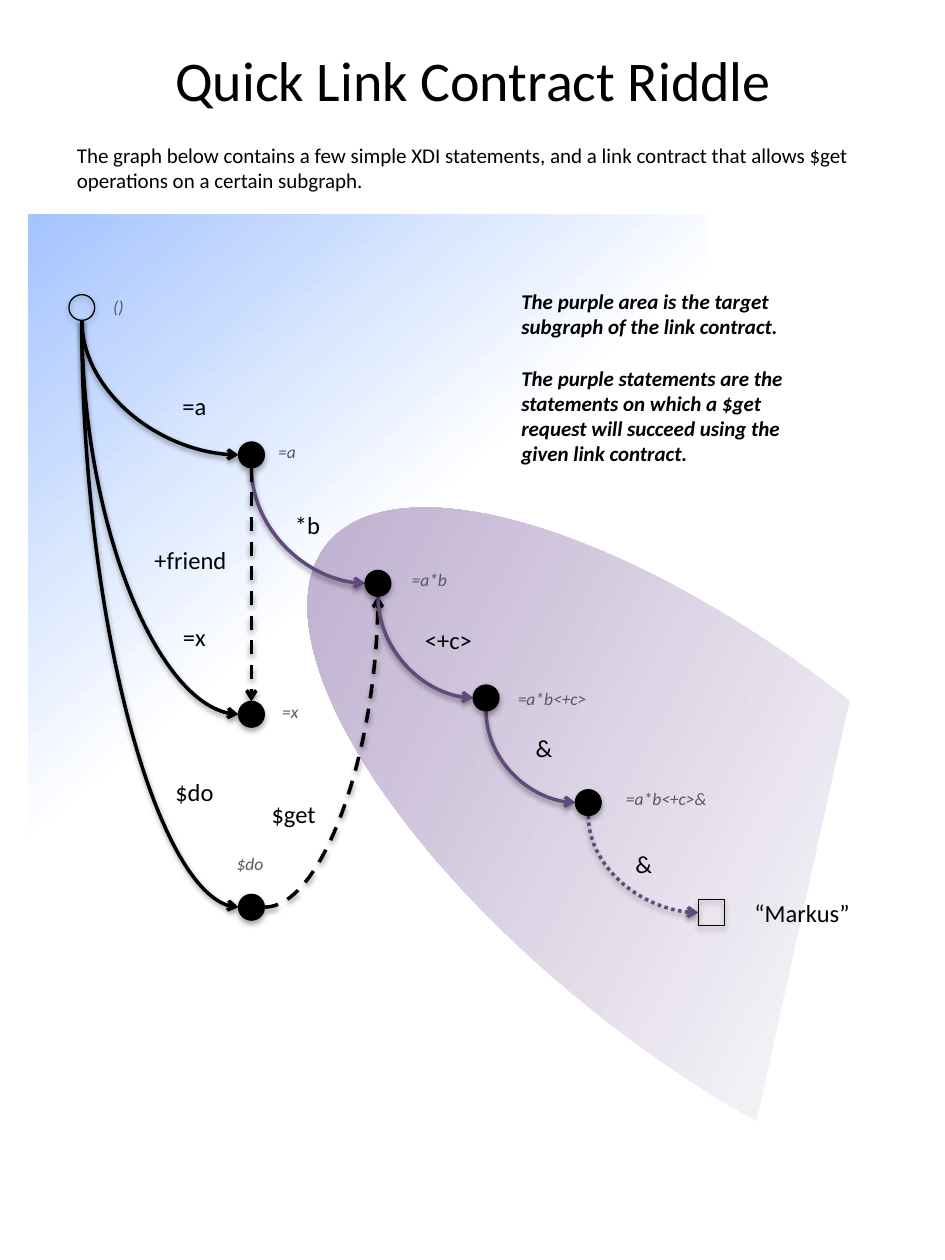
from pptx import Presentation
from pptx import util as u
from pptx.dml import color as c
from pptx.enum import dml, shapes, text
from pptx.oxml import ns, parse_xml

COLORS = {"black": "000000", "white": "FFFFFF", "gray": "595959",
          "blue": "A4C4FF", "lilac": "B3A2C7", "purple": "604A7B"}
FONT = "Calibri"
NODE = 0.52
RADIUS = NODE / 2
NODES = {"root": (1.65, 6.2), "a": (5.07, 9.17), "x": (5.07, 14.4),
         "do": (5.07, 18.29), "ab": (7.62, 11.76), "abc": (9.8, 14.07),
         "abc&": (11.86, 16.18), "literal": (14.34, 18.4)}
ARCS = [("root", "do", "black", None), ("root", "x", "black", None),
        ("root", "a", "black", None), ("a", "ab", "purple", None),
        ("ab", "abc", "purple", None), ("abc", "abc&", "purple", None),
        ("abc&", "literal", "purple", dml.MSO_LINE.ROUND_DOT)]
ARC_LABELS = [("$do", 3.92, 15.54, 1.4), ("=a", 3.92, 7.75, 1.2),
              ("*b", 6.2, 10.16, 1.2), ("$get", 5.92, 15.98, 1.5),
              ("<+c>", 9.04, 12.47, 1.6), ("&", 10.97, 14.66, 1.2),
              ("&", 12.98, 16.99, 1.2), ("=x", 3.92, 12.42, 1.2),
              ("+friend", 3.84, 10.87, 2.1), ("“Markus”", 16.17, 17.98, 2.5)]
NODE_LABELS = [("()", 2.03, 5.84, 0.84), ("=a", 5.36, 8.76, 1.12),
               ("=a*b", 8.05, 11.35, 1.5), ("=a*b<+c>", 10.19, 13.74, 2.31),
               ("=a*b<+c>&", 12.37, 15.77, 2.31), ("=x", 5.44, 14, 1.12),
               ("$do", 4.52, 17.07, 1.12)]
NOTES = [("The purple area is the target subgraph of the link contract.", 5.69, 1.5),
         ("The purple statements are the statements on which a $get request "
          "will succeed using the given link contract.", 7.24, 1.78)]


def rgb(name):
    """Return the named colour."""
    return c.RGBColor.from_string(COLORS[name])


def write(frame, words, size, color="black", bold=False, italic=False, align=None):
    """Put one formatted run in the first paragraph of a frame."""
    para = frame.paragraphs[0]
    para.alignment = align
    span = para.add_run()
    span.text = words
    span.font.name, span.font.size = FONT, u.Pt(size)
    span.font.bold, span.font.italic = bold, italic
    span.font.color.rgb = rgb(color)


def add_text(page, words, left, top, width, height, size, wrap=True, **style):
    """Add a text box with a single run; one that does not wrap grows to fit."""
    box = page.shapes.add_textbox(u.Cm(left), u.Cm(top), u.Cm(width), u.Cm(height))
    box.text_frame.word_wrap = wrap
    if not wrap:
        box.text_frame.auto_size = text.MSO_AUTO_SIZE.SHAPE_TO_FIT_TEXT
    write(box.text_frame, words, size, **style)


def add_shadow(item, alpha, distance):
    """Give a shape or connector a soft shadow below it."""
    item._element.spPr.append(parse_xml(
        f'<a:effectLst {ns.nsdecls("a")}><a:outerShdw blurRad="40000" '
        f'dist="{distance}" dir="5400000" rotWithShape="0">'
        f'<a:srgbClr val="{COLORS["black"]}"><a:alpha val="{alpha}"/></a:srgbClr>'
        '</a:outerShdw></a:effectLst>'))


def add_area(page, kind, left, top, width, height, color, white_until, angle, turn=0):
    """Add a background area fading from white to a colour."""
    area = page.shapes.add_shape(kind, u.Cm(left), u.Cm(top), u.Cm(width), u.Cm(height))
    area.rotation = turn
    area.shadow.inherit = False
    area.line.fill.background()
    area.fill.gradient()
    area.fill.gradient_angle = angle
    stops = zip(area.fill.gradient_stops, ("white", color), (white_until, 1))
    for stop, name, position in stops:
        stop.color.rgb, stop.position = rgb(name), position


def add_node(page, name):
    """Add a graph node: open root, square literal, black dots otherwise."""
    x, y = NODES[name]
    kind = shapes.MSO_SHAPE.RECTANGLE if name == "literal" else shapes.MSO_SHAPE.OVAL
    node = page.shapes.add_shape(kind, u.Cm(x - RADIUS), u.Cm(y - RADIUS),
                                 u.Cm(NODE), u.Cm(NODE))
    if name in ("root", "literal"):
        node.fill.background()
    else:
        node.fill.solid()
        node.fill.fore_color.rgb = rgb("black")
    node.line.color.rgb, node.line.width = rgb("black"), u.Pt(0.75)
    add_shadow(node, 35000, 23000)


def add_curve(page, start, end, color, dash, preset="curvedConnector2"):
    """Add a curved arrow; one that runs downward leaves its start vertically."""
    (x1, y1), (x2, y2) = start, end
    downward = y2 > y1
    if downward:
        middle_x, middle_y = (x1 + x2) / 2, (y1 + y2) / 2
        half_run, half_drop = (x2 - x1) / 2, (y2 - y1) / 2
        x1, x2 = middle_x - half_drop, middle_x + half_drop
        y1, y2 = middle_y - half_run, middle_y + half_run
    curve = page.shapes.add_connector(shapes.MSO_CONNECTOR.CURVE,
                                      u.Cm(x1), u.Cm(y1), u.Cm(x2), u.Cm(y2))
    properties = curve._element.spPr
    properties.find(ns.qn("a:prstGeom")).set("prst", preset)
    if downward:
        frame = properties.find(ns.qn("a:xfrm"))
        frame.set("rot", "16200000")
        frame.set("flipH", "1")
    curve.line.color.rgb, curve.line.width = rgb(color), u.Pt(2)
    if dash:
        curve.line.dash_style = dash
    properties.find(ns.qn("a:ln")).append(
        parse_xml(f'<a:tailEnd {ns.nsdecls("a")} type="arrow"/>'))
    add_shadow(curve, 38000, 20000)


def add_arcs(page):
    """Add every arrow of the graph."""
    below = {name: (x, y + RADIUS) for name, (x, y) in NODES.items()}
    beside = {name: (x - RADIUS, y) for name, (x, y) in NODES.items()}
    x, y = NODES["do"]
    add_curve(page, (x + RADIUS, y), below["ab"], "black", dml.MSO_LINE.DASH)
    for source, target, color, dash in ARCS:
        add_curve(page, below[source], beside[target], color, dash)
    x, y = NODES["x"]
    add_curve(page, below["a"], (x, y - RADIUS), "black", dml.MSO_LINE.DASH,
              "curvedConnector3")


def add_title(page):
    """Fill and place the title placeholder."""
    title = page.shapes.title
    title.left, title.top = u.Cm(0.97), u.Cm(0.84)
    title.width, title.height = u.Cm(17.15), u.Cm(1.5)
    title.text_frame.vertical_anchor = text.MSO_ANCHOR.MIDDLE
    write(title.text_frame, "Quick Link Contract Riddle", 32, align=text.PP_ALIGN.CENTER)


def main():
    """Build the slide and save it."""
    deck = Presentation()
    deck.slide_width, deck.slide_height = u.Cm(19.05), u.Cm(25.4)
    page = deck.slides.add_slide(deck.slide_layouts[5])
    add_area(page, shapes.MSO_SHAPE.RECTANGLE, 0.58, 4.32, 13.69, 13.67,
             "blue", 0.49, 130)
    add_area(page, shapes.MSO_SHAPE.CHORD, 4.39, 13.26, 20.45, 8.1,
             "lilac", 0.28, 190, 38.2)
    add_title(page)
    add_text(page, "The graph below contains a few simple XDI statements, and a link "
             "contract that allows $get operations on a certain subgraph.",
             1.3, 2.74, 16.51, 1.27, 12)
    add_arcs(page)
    for name in NODES:
        add_node(page, name)
    for words, center, top, width in ARC_LABELS:
        add_text(page, words, center - width / 2, top, width, 0.86, 14, wrap=False,
                 align=text.PP_ALIGN.CENTER)
    for words, left, top, width in NODE_LABELS:
        add_text(page, words, left, top, width, 0.81, 10, color="gray", italic=True)
    for words, top, height in NOTES:
        add_text(page, words, 10.26, top, 6.3, height, 12, bold=True, italic=True)
    deck.save("out.pptx")


if __name__ == "__main__":
    main()
